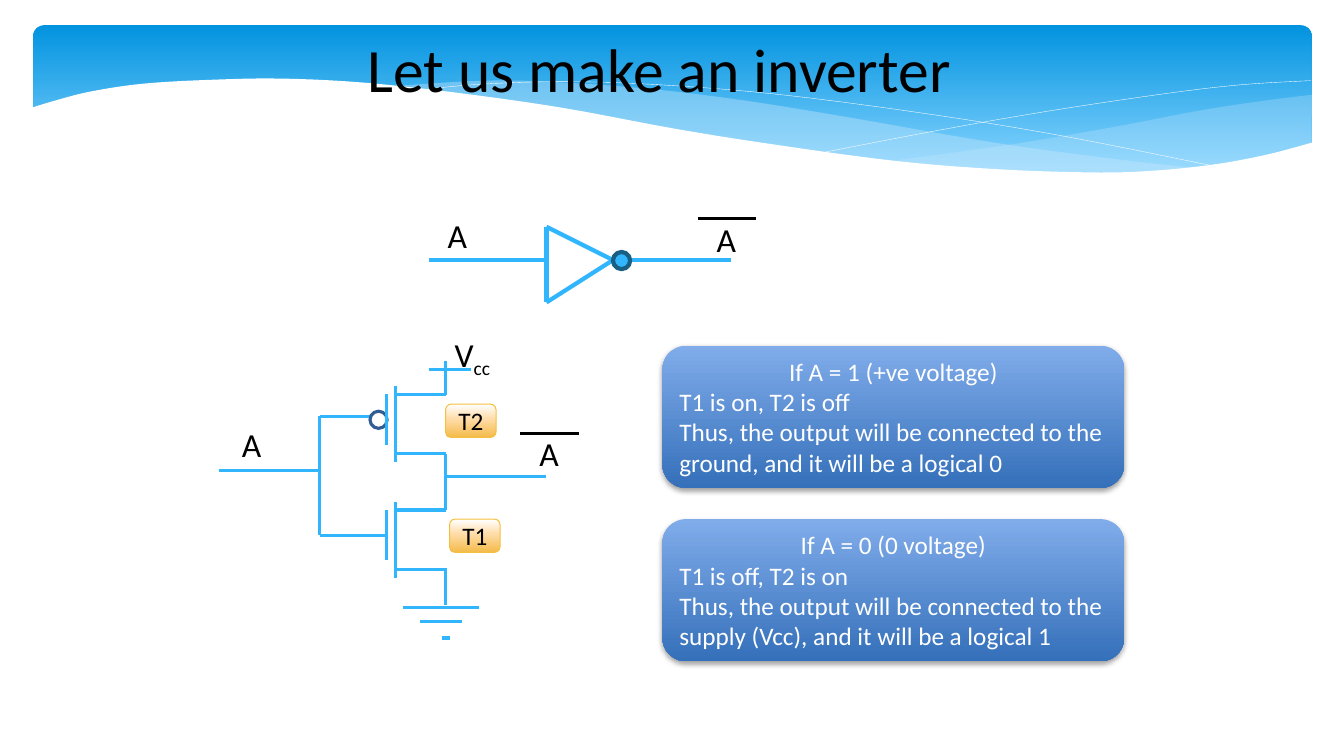
from lxml.etree import SubElement
from pptx import Presentation
from pptx.dml.color import RGBColor
from pptx.enum.shapes import MSO_CONNECTOR, MSO_SHAPE
from pptx.enum.text import MSO_ANCHOR, PP_ALIGN
from pptx.oxml.ns import qn
from pptx.util import Inches, Pt

COLORS = {
    "black": "000000", "white": "FFFFFF", "mist": "C6E7FC",
    "wire": "31B6FD", "bubble_edge": "195F84", "gate_edge": "315D95",
    "tag_edge": "F5C040",
}
HEADER_STOPS = [(0, "0293E0"), (90, "83D3FE")]
CARD_STOPS = [(0, "80ACEA"), (100, "3570BA")]
TAG_STOPS = [(0, "FFFFFF"), (44, "FFDDAA"), (100, "F4BB4A")]

# Header curves as anchor points, in inches
RIGHT_WAVE = [(13.01, 0.94), (12.46, 1.01), (11.88, 1.1), (11.1, 1.25),
              (10.05, 1.43), (8.82, 1.6)]
RIGHT_WAVE_BASE = [(8.82, 1.6), (9.58, 1.67), (10.25, 1.71), (10.85, 1.72),
                   (11.51, 1.7), (12.07, 1.63), (12.57, 1.54), (13.01, 1.42)]
MIDDLE_WAVE = [(11.9, 1.67), (11.16, 1.59), (9.89, 1.42), (8.39, 1.16),
               (7.4, 1), (6.52, 0.89), (5.6, 0.82), (4.82, 0.8), (3.82, 0.86)]
MIDDLE_WAVE_BASE = [(3.82, 0.86), (4.83, 0.97), (5.99, 1.16), (7.55, 1.43),
                    (8.87, 1.61), (9.81, 1.69), (10.76, 1.73), (11.31, 1.72),
                    (11.9, 1.67)]
LONG_CURVE = [(4.12, 0.9), (4.7, 0.84), (5.55, 0.81), (6.52, 0.84),
              (7.75, 0.94), (9.27, 1.14), (10.6, 1.36), (12.1, 1.66)]
SHORT_CURVE = [(8.18, 1.51), (9.27, 1.3), (10.35, 1.11), (11.55, 0.93),
               (12.32, 0.84), (13, 0.8)]
FRONT_WAVE = [(13.03, 1.41), (12.54, 1.54), (11.98, 1.64), (11.34, 1.7),
              (10.78, 1.71), (9.92, 1.68), (8.91, 1.6), (7.72, 1.44),
              (6.71, 1.28), (5.58, 1.07), (4.53, 0.92), (3.61, 0.82),
              (2.82, 0.78), (2.14, 0.79), (1.42, 0.83), (0.89, 0.91),
              (0.54, 1), (0.31, 1.07)]
FRONT_WAVE_BASE = [(0.31, 2.24), (13.03, 2.24)]


def rgb(name):
    return RGBColor.from_string(COLORS[name])


def write(frame, paragraphs, size=24, color="black", aligns=(PP_ALIGN.LEFT,),
          subscript=None):
    for number, words in enumerate(paragraphs):
        paragraph = frame.paragraphs[0] if number == 0 else frame.add_paragraph()
        paragraph.alignment = aligns[min(number, len(aligns) - 1)]
        for part in filter(None, (words, subscript)):
            run = paragraph.add_run()
            run.text = part
            run.font.size, run.font.name = Pt(size), "Calibri"
            run.font.color.rgb = rgb(color)
            if part == subscript:
                run._r.get_or_add_rPr().set("baseline", "-25000")


def wire(slide, start, end, color="wire", width=2.25):
    line = slide.shapes.add_connector(
        MSO_CONNECTOR.STRAIGHT, *(Inches(value) for value in (*start, *end)))
    line.line.color.rgb = rgb(color)
    line.line.width = Pt(width)
    SubElement(line._element.spPr, qn("a:effectLst"))


def block(slide, kind, box, fill=None, stops=None, edge=None, width=2.25):
    shape = slide.shapes.add_shape(kind, *(Inches(value) for value in box))
    shape.shadow.inherit = False
    if stops:
        shape.fill.gradient()
        shape.fill.gradient_angle = 270
        stop_list = shape._element.spPr.find(".//" + qn("a:gsLst"))
        for stop in list(stop_list):
            stop_list.remove(stop)
        for place, color in stops:
            stop = SubElement(stop_list, qn("a:gs"), pos=str(place * 1000))
            SubElement(stop, qn("a:srgbClr"), val=color)
    else:
        shape.fill.solid()
        shape.fill.fore_color.rgb = rgb(fill)
    if edge:
        shape.line.color.rgb = rgb(edge)
        shape.line.width = Pt(width)
    else:
        shape.line.fill.background()
    return shape


def smooth(points, steps=5):
    """Catmull-Rom curve through the points."""
    padded = [points[0], *points, points[-1]]
    curve = [points[0]]
    for a, b, c, d in zip(padded, padded[1:], padded[2:], padded[3:]):
        for step in range(1, steps + 1):
            t = step / steps
            curve.append(tuple(
                0.5 * (2 * q + (r - p) * t + (2 * p - 5 * q + 4 * r - s) * t ** 2
                       + (3 * q - p - 3 * r + s) * t ** 3)
                for p, q, r, s in zip(a, b, c, d)))
    return curve


def wave(slide, points, fill=None, opacity=100):
    outline = [(Inches(x), Inches(y)) for x, y in points]
    builder = slide.shapes.build_freeform(*outline[0])
    builder.add_line_segments(outline[1:], close=bool(fill))
    shape = builder.convert_to_shape()
    shape.shadow.inherit = False
    if fill:
        shape.fill.solid()
        shape.fill.fore_color.rgb = rgb(fill)
        shape.line.fill.background()
        color = shape._element.spPr.find(".//" + qn("a:srgbClr"))
        SubElement(color, qn("a:alpha"), val=str(opacity * 1000))
    else:
        shape.fill.background()
        shape.line.color.rgb = rgb("white")
        shape.line.width = Pt(0.25)


def header(slide, left, top, width, height):
    banner = block(slide, MSO_SHAPE.ROUNDED_RECTANGLE,
                   (left, top, width, height), stops=HEADER_STOPS)
    banner.adjustments[0] = 0.07
    wave(slide, smooth(RIGHT_WAVE) + smooth(RIGHT_WAVE_BASE), "mist", 29)
    wave(slide, smooth(MIDDLE_WAVE) + smooth(MIDDLE_WAVE_BASE), "mist", 40)
    wave(slide, smooth(LONG_CURVE))
    wave(slide, smooth(SHORT_CURVE))
    wave(slide, smooth(FRONT_WAVE) + FRONT_WAVE_BASE, "white")
    # Title goes in front of the waves
    title = slide.shapes.title
    title.left, title.top = Inches(left + 1.5), Inches(top)
    title.width, title.height = Inches(9.42), Inches(0.84)
    write(title.text_frame, ["Let us make an inverter"], size=44,
          aligns=(PP_ALIGN.CENTER,))
    slide.shapes._spTree.append(title._element)


def label(slide, x, y, words, width=0.41, subscript=None, overbar=False):
    box = slide.shapes.add_textbox(Inches(x), Inches(y), Inches(width), Inches(0.5))
    box.text_frame.word_wrap = False
    write(box.text_frame, [words], subscript=subscript)
    if overbar:
        wire(slide, (x - 0.09, y + 0.05), (x + 0.49, y + 0.05), color="black")


def inverter_symbol(slide, left, top):
    axis = top + 0.5
    base, tip = left + 1.17, left + 1.83
    upper, lower, point = (base, top + 0.17), (base, top + 0.92), (tip, axis)
    for start, end in [((left, axis), (base, axis)), (upper, lower),
                       (upper, point), (point, lower),
                       ((left + 2, axis), (left + 3, axis))]:
        wire(slide, start, end, width=3)
    block(slide, MSO_SHAPE.OVAL, (tip, axis - 0.08, 0.17, 0.17),
          fill="wire", edge="bubble_edge", width=3)
    label(slide, left + 0.09, top, "A")
    label(slide, left + 2.76, top + 0.04, "A", overbar=True)


def transistor(slide, left, top):
    channel = left + 0.09
    wire(slide, (left, top + 0.08), (left, top + 0.58))
    wire(slide, (channel, top), (channel, top + 0.75))
    for terminal in (top + 0.08, top + 0.67):
        wire(slide, (channel, terminal), (channel + 0.5, terminal))


def tag(slide, x, y, words):
    shape = block(slide, MSO_SHAPE.ROUNDED_RECTANGLE, (x, y, 0.5, 0.33),
                  stops=TAG_STOPS, edge="tag_edge", width=0.75)
    shape.text_frame.vertical_anchor = MSO_ANCHOR.MIDDLE
    write(shape.text_frame, [words], size=18, aligns=(PP_ALIGN.CENTER,))


def cmos_circuit(slide, left, top):
    wires = [
        (0, 1.41, 1, 1.41), (1, 0.87, 1, 2.05),              # input
        (1, 0.87, 1.5, 0.87), (1, 2.05, 1.66, 2.05),         # gates
        (2.25, 0.32, 2.25, 0.66), (2.08, 0.41, 2.5, 0.41),   # supply
        (2.25, 1.24, 2.25, 1.8), (2.25, 1.47, 3.25, 1.47),   # output
        (2.25, 2.38, 2.25, 2.74), (1.83, 2.77, 2.58, 2.77),  # ground
        (2, 2.91, 2.41, 2.91), (2.21, 3.07, 2.29, 3.07),
    ]
    for x1, y1, x2, y2 in wires:
        wire(slide, (left + x1, top + y1), (left + x2, top + y2))
    block(slide, MSO_SHAPE.OVAL, (left + 1.5, top + 0.82, 0.17, 0.17),
          fill="white", edge="gate_edge")
    for drop in (0.57, 1.72):
        transistor(slide, left + 1.66, top + drop)
    label(slide, left + 2.24, top, "V", width=0.58, subscript="cc")
    label(slide, left + 0.13, top + 0.9, "A")
    label(slide, left + 3.08, top + 0.99, "A", overbar=True)
    tag(slide, left + 2.29, top + 1.89, "T1")
    tag(slide, left + 2.25, top + 0.75, "T2")


def case_card(slide, box, lines):
    card = block(slide, MSO_SHAPE.ROUNDED_RECTANGLE, box, stops=CARD_STOPS)
    effects = card._element.spPr.find(qn("a:effectLst"))
    shadow = SubElement(effects, qn("a:outerShdw"), blurRad=str(Pt(4)),
                        dist=str(Pt(2)), dir="5400000", rotWithShape="0")
    color = SubElement(shadow, qn("a:srgbClr"), val=COLORS["black"])
    SubElement(color, qn("a:alpha"), val="38000")
    card.text_frame.vertical_anchor = MSO_ANCHOR.MIDDLE
    write(card.text_frame, lines, size=18, color="white",
          aligns=(PP_ALIGN.CENTER, PP_ALIGN.LEFT))


def main():
    deck = Presentation()
    deck.slide_width, deck.slide_height = Inches(13.33), Inches(7.5)
    slide = deck.slides.add_slide(deck.slide_layouts[5])
    header(slide, 0.33, 0.25, 12.68, 1.56)
    inverter_symbol(slide, 4.25, 2.08)
    cmos_circuit(slide, 2.17, 3.26)
    cases = [
        ["If A = 1 (+ve voltage)", "T1 is on, T2 is off",
         "Thus, the output will be connected to the ground, and it will be a logical 0"],
        ["If A = 0 (0 voltage)", "T1 is off, T2 is on",
         "Thus, the output will be connected to the supply (Vcc), and it will be a logical 1"],
    ]
    for row, lines in enumerate(cases):
        case_card(slide, (6.57, 3.43 + 1.72 * row, 4.58, 1.41), lines)
    deck.save("out.pptx")


if __name__ == "__main__":
    main()
